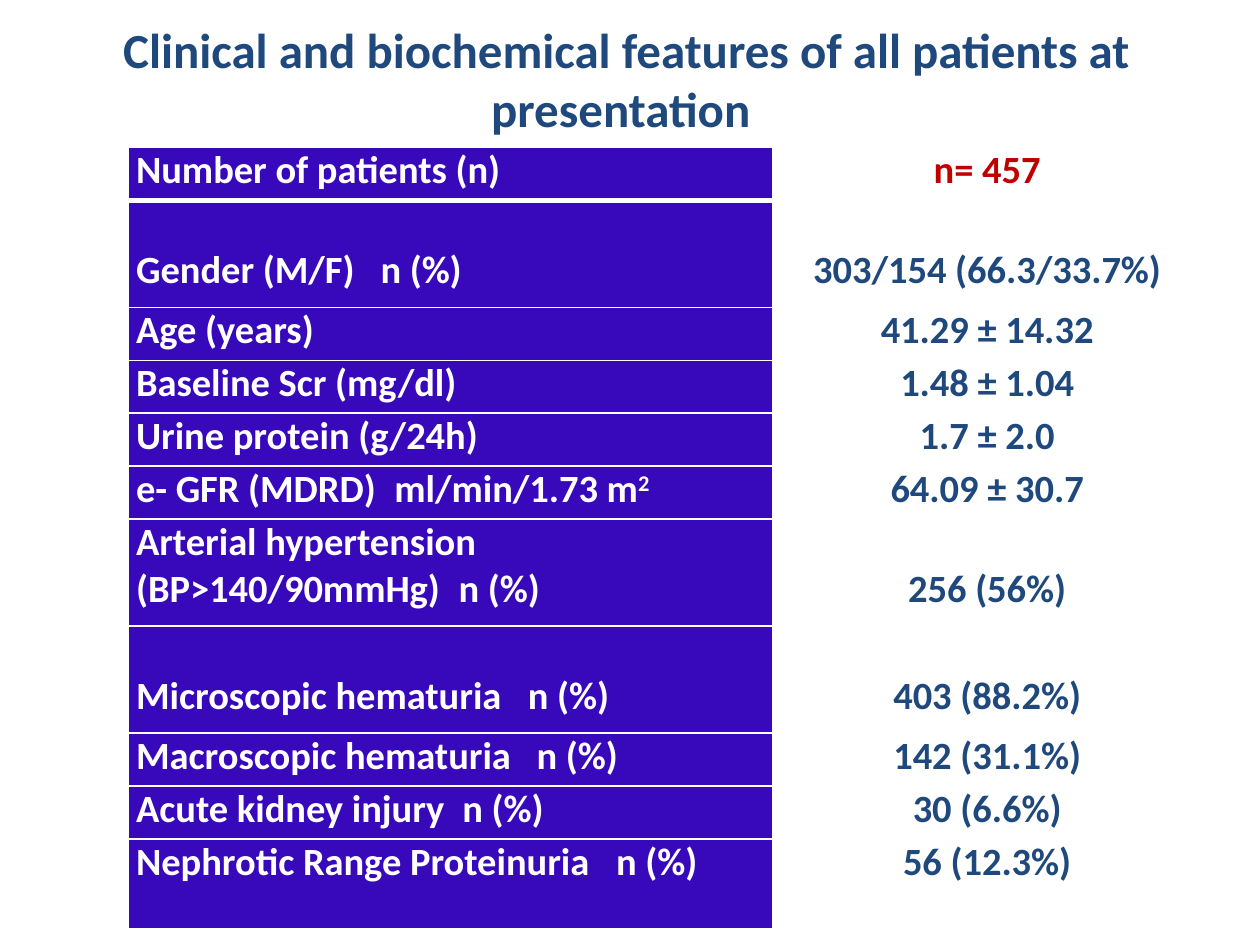
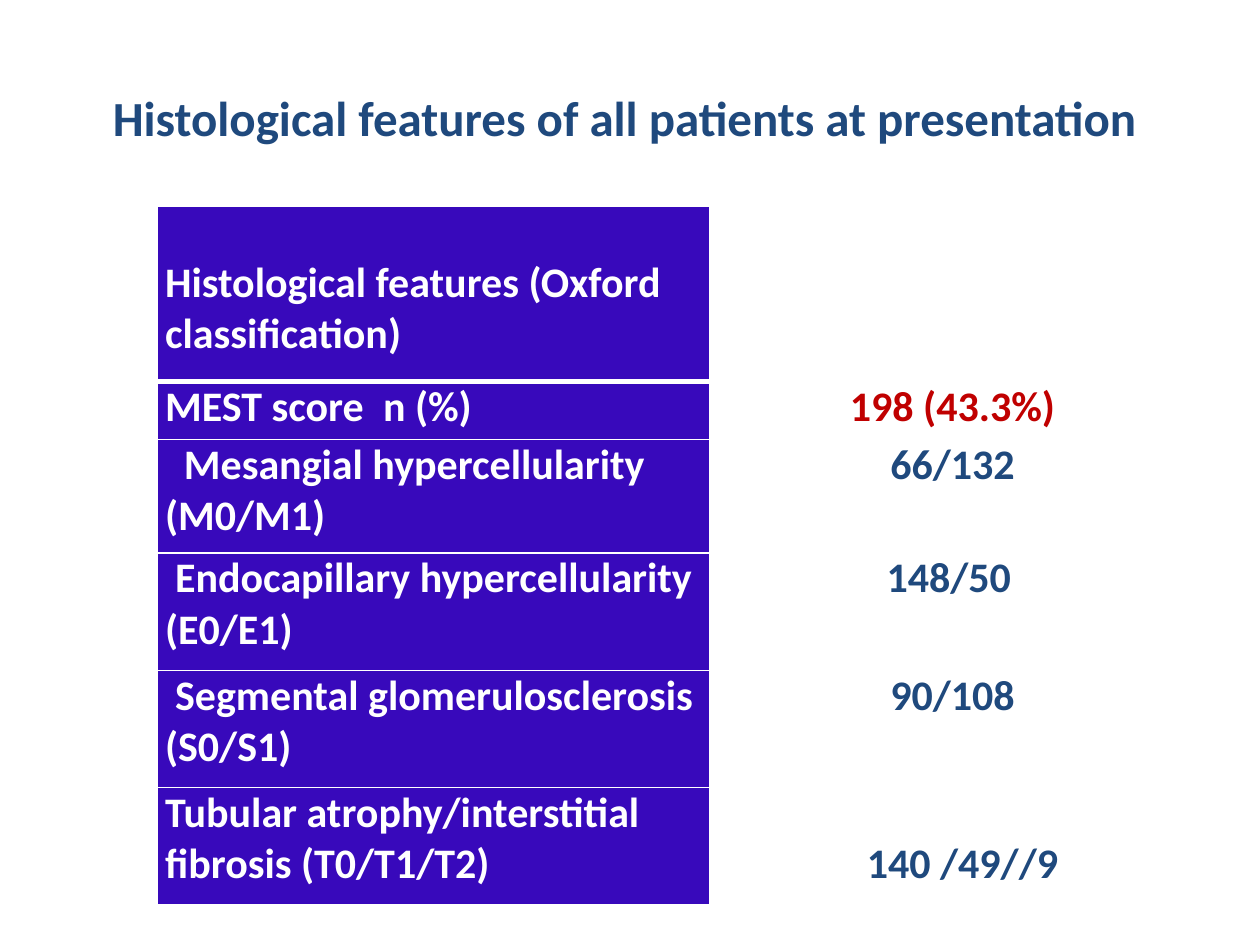
import dataclasses
import pptx
import pptx.dml.color
import pptx.enum.text
import pptx.oxml.xmlchemy
import pptx.util
import lxml.etree

Inches = pptx.util.Inches
Pt = pptx.util.Pt
RGB = pptx.dml.color.RGBColor.from_string
ALIGN = pptx.enum.text.PP_ALIGN
ANCHOR = pptx.enum.text.MSO_ANCHOR
DRAWING = "{http://schemas.openxmlformats.org/drawingml/2006/main}"


@dataclasses.dataclass
class Theme:
    font: str = "Calibri"
    navy: str = "1F497D"
    violet: str = "3809BB"
    white: str = "FFFFFF"
    red: str = "C00000"
    title_size: int = 28
    side_margin: float = 0.06
    line_factor: float = 1.22


theme = Theme()


@dataclasses.dataclass
class Row:
    height: float
    label: str
    value: str
    label_drop: int = 0      # lines left free above the label
    value_drop: int = 0      # lines left free above the value
    tab: float = 0           # where the text after the tab starts
    indent: float = 0        # first-line indent of the label
    shift: float = 0         # extra left margin of the value
    color: str = theme.navy
    superscript: str = ""


def add_span(para, text, size, color):
    span = para.add_run()
    span.text = text
    span.font.name = theme.font
    span.font.size = Pt(size)
    span.font.bold = True
    span.font.color.rgb = RGB(color)
    return span


def style_cell(cell, fill, drop, size, bottom_width):
    cell.margin_left = cell.margin_right = Inches(theme.side_margin)
    cell.margin_top = Inches(drop * size * theme.line_factor / 72)
    cell.margin_bottom = 0
    cell_props = cell._tc.get_or_add_tcPr()
    for side, width in (("lnL", 1), ("lnR", 1), ("lnT", 1), ("lnB", bottom_width)):
        line = lxml.etree.SubElement(cell_props, DRAWING + side, w=str(Pt(width)))
        solid = lxml.etree.SubElement(line, DRAWING + "solidFill")
        lxml.etree.SubElement(solid, DRAWING + "srgbClr", val=theme.white)
    cell.fill.solid()
    cell.fill.fore_color.rgb = RGB(fill)


# Content of the two tables
clinical_rows = [
    Row(0.42, "Number of patients (n)", "n= 457", color=theme.red),
    Row(0.85, "Gender (M/F)\tn (%)", "303/154 (66.3/33.7%)", 1, 1, tab=1.94),
    Row(0.42, "Age (years)", "41.29 ± 14.32"),
    Row(0.42, "Baseline Scr (mg/dl)", "1.48 ± 1.04"),
    Row(0.42, "Urine protein (g/24h)", "1.7 ± 2.0"),
    Row(0.42, "e- GFR (MDRD)\tml/min/1.73 m", "64.09 ± 30.7", tab=2.05, superscript="2"),
    Row(0.85, "Arterial hypertension (BP>140/90mmHg)\tn (%)", "256 (56%)", 0, 1, tab=2.56),
    Row(0.85, "Microscopic hematuria\tn (%)", "403 (88.2%)", 1, 1, tab=3.11),
    Row(0.42, "Macroscopic hematuria\tn (%)", "142 (31.1%)", tab=3.18),
    Row(0.42, "Acute kidney injury\tn (%)", "30 (6.6%)", tab=2.59),
    Row(0.71, "Nephrotic Range Proteinuria\tn (%)", "56 (12.3%)", tab=3.81),
]
histology_rows = [
    Row(1.39, "Histological features (Oxford classification)", "", 1),
    Row(0.46, "MEST score\tn (%)", "198 (43.3%)", tab=1.73, shift=0.9, color=theme.red),
    Row(0.9, "Mesangial hypercellularity (M0/M1)", "66/132", indent=0.15, shift=0.9),
    Row(0.93, "Endocapillary hypercellularity (E0/E1)", "148/50", indent=0.08, shift=0.84),
    Row(0.93, "Segmental glomerulosclerosis (S0/S1)", "90/108", indent=0.08, shift=0.9),
    Row(0.93, "Tubular atrophy/interstitial fibrosis (T0/T1/T2)", "140 /49//9", 0, 1, shift=1.06),
]

# Title, title position, table position, column widths, type size, rows
slides = [
    ("Clinical and biochemical features of all patients at presentation ",
     (0.47, 0), (1.02, 1.17), (5.11, 3.41), 22, clinical_rows),
    ("Histological features of all patients at presentation ",
     (0.5, 0.3), (1.25, 1.64), (4.38, 2.96), 24, histology_rows),
]

deck = pptx.Presentation()
deck.slide_width, deck.slide_height = Inches(10), Inches(7.5)

for heading, title_at, table_at, widths, size, rows in slides:
    page = deck.slides.add_slide(deck.slide_layouts[5])

    # Title
    title = page.shapes.title
    title.left, title.top = map(Inches, title_at)
    title.width, title.height = Inches(9), Inches(1.25)
    title.text_frame.vertical_anchor = ANCHOR.MIDDLE
    para = title.text_frame.paragraphs[0]
    para.alignment = ALIGN.CENTER
    add_span(para, heading, theme.title_size, theme.navy)

    # Table grid
    total_height = sum(row.height for row in rows)
    table = page.shapes.add_table(len(rows), 2, *map(Inches, table_at),
                                  Inches(sum(widths)), Inches(total_height)).table
    table.first_row = table.horz_banding = False
    for column, width in zip(table.columns, widths):
        column.width = Inches(width)

    for index, row in enumerate(rows):
        table.rows[index].height = Inches(row.height)
        bottom_width = 3 if index == 0 else 1

        # Label
        cell = table.cell(index, 0)
        style_cell(cell, theme.violet, row.label_drop, size, bottom_width)
        para = cell.text_frame.paragraphs[0]
        add_span(para, row.label, size, theme.white)
        if row.superscript:
            span = add_span(para, row.superscript, size, theme.white)
            span.font._element.set("baseline", "30000")
        para_props = para._p.get_or_add_pPr()
        if row.indent:
            para_props.set("indent", str(Inches(row.indent)))
        if row.tab:
            stops = lxml.etree.SubElement(para_props, DRAWING + "tabLst")
            lxml.etree.SubElement(stops, DRAWING + "tab", pos=str(Inches(row.tab)), algn="l")

        # Value
        cell = table.cell(index, 1)
        style_cell(cell, theme.white, row.value_drop, size, bottom_width)
        cell.margin_left = Inches(theme.side_margin + row.shift)
        if row.value:
            para = cell.text_frame.paragraphs[0]
            para.alignment = ALIGN.CENTER
            add_span(para, row.value, size, row.color)

deck.save("out.pptx")
